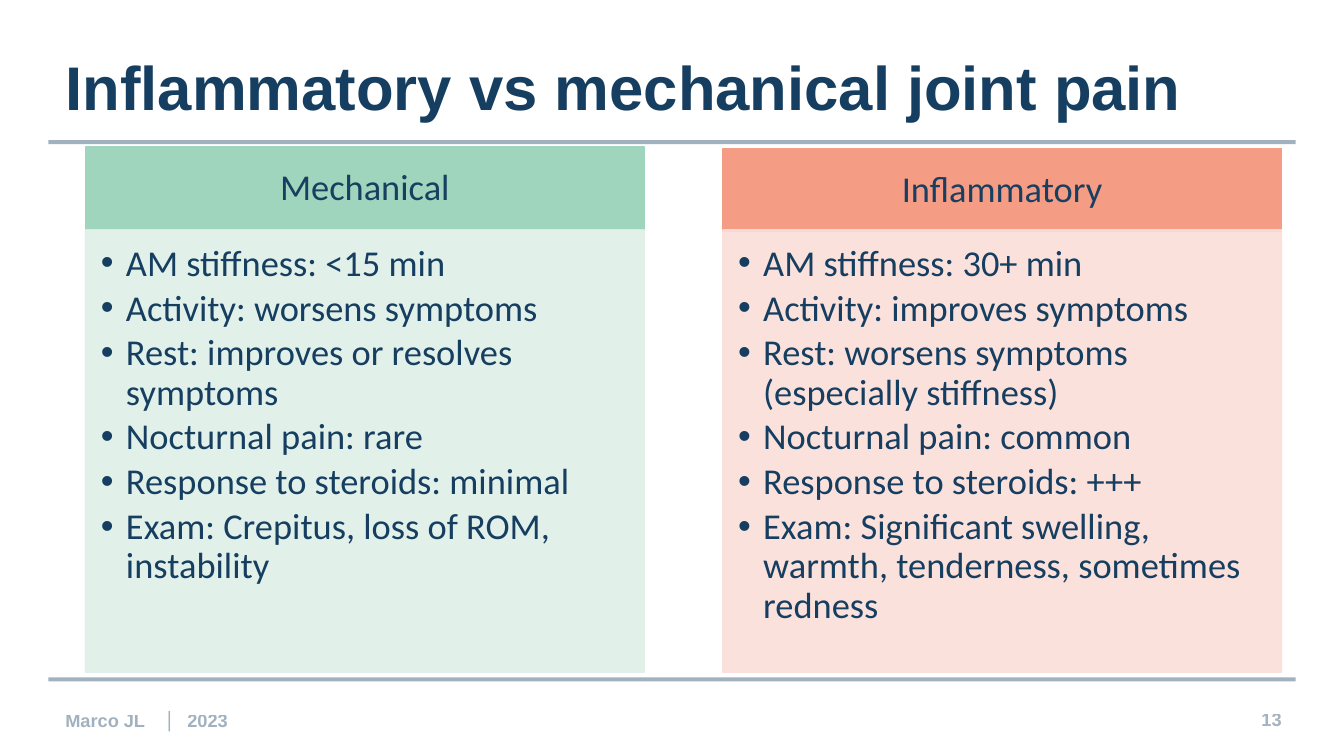
"""Build the slide comparing mechanical and inflammatory joint pain."""
from dataclasses import dataclass
from typing import Any

from lxml.etree import SubElement
from pptx import Presentation
from pptx.dml.color import RGBColor
from pptx.enum.shapes import MSO_CONNECTOR, MSO_SHAPE
from pptx.enum.text import MSO_ANCHOR, MSO_AUTO_SIZE, PP_ALIGN
from pptx.oxml.ns import qn
from pptx.util import Inches, Pt


@dataclass(frozen=True)
class Theme:
    """Colours, fonts, type sizes and opacities."""
    navy: str = "163E60"
    heading_navy: str = "183F5F"
    heading_font: str = "Arial"
    body_font: str = "Calibri"
    divider_font: str = "Montserrat"
    title_size: float = 44
    body_size: float = 26
    footer_size: float = 13
    divider_size: float = 16
    muted: int = 40
    tint: int = 90


@dataclass(frozen=True)
class PainType:
    """One column of the comparison."""
    name: str
    left: float
    top: float
    heading_fill: str
    body_fill: str
    features: tuple[str, ...]


THEME = Theme()
COLUMN_WIDTH, HEADING_HEIGHT, BODY_TOP, BODY_HEIGHT = 5.54, 0.82, 2.28, 4.39
PAIN_TYPES = (
    PainType("Mechanical", 0.85, 1.46, "A0D5BD", "DFEFE8", (
        "AM stiffness: <15 min",
        "Activity: worsens symptoms",
        "Rest: improves or resolves symptoms",
        "Nocturnal pain: rare",
        "Response to steroids: minimal",
        "Exam: Crepitus, loss of ROM, instability",
    )),
    PainType("Inflammatory", 7.17, 1.48, "F59C85", "FBDED9", (
        "AM stiffness: 30+ min",
        "Activity: improves symptoms",
        "Rest: worsens symptoms (especially stiffness)",
        "Nocturnal pain: common",
        "Response to steroids: +++",
        "Exam: Significant swelling, warmth, tenderness, sometimes redness",
    )),
)


def apply(target: Any, **formats: Any) -> None:
    """Set each named format on the target."""
    for name, value in formats.items():
        setattr(target, name, value)


def set_opacity(element: Any, percent: int) -> None:
    """Give every colour inside the element an opacity."""
    for colour in element.iter(qn("a:srgbClr")):
        SubElement(colour, qn("a:alpha"), val=str(percent * 1000))


def add_run(paragraph: Any, text: str, font: str, size: float, colour: str,
            bold: bool = False, opacity: int = 100) -> None:
    """Append formatted text to a paragraph."""
    run = paragraph.add_run()
    run.text = text
    apply(run.font, name=font, size=Pt(size), bold=bold)
    run.font.color.rgb = RGBColor.from_string(colour)
    if opacity < 100:
        set_opacity(run._r, opacity)


def add_rule(slide: Any, y: float) -> None:
    """Draw a muted horizontal rule."""
    rule = slide.shapes.add_connector(
        MSO_CONNECTOR.STRAIGHT, Inches(0.48), Inches(y), Inches(12.85), Inches(y))
    rule.line.width = Pt(3)
    rule.line.color.rgb = RGBColor.from_string(THEME.navy)
    properties = rule._element.spPr
    set_opacity(properties, THEME.muted)
    SubElement(properties, qn("a:effectLst"))


def add_panel(slide: Any, left: float, top: float, height: float, colour: str,
              insets: tuple[float, ...], anchor: Any, opacity: int = 100) -> Any:
    """Draw a filled rectangle and return its text frame."""
    panel = slide.shapes.add_shape(
        MSO_SHAPE.RECTANGLE, Inches(left), Inches(top), Inches(COLUMN_WIDTH), Inches(height))
    panel.shadow.inherit = False
    panel.fill.solid()
    panel.fill.fore_color.rgb = RGBColor.from_string(colour)
    panel.line.width = Pt(1)
    panel.line.color.rgb = RGBColor.from_string(colour)
    if opacity < 100:
        set_opacity(panel._element.spPr, opacity)
    sides = ("margin_left", "margin_top", "margin_right", "margin_bottom")
    margins = {side: Inches(inset) for side, inset in zip(sides, insets)}
    apply(panel.text_frame, word_wrap=True, vertical_anchor=anchor, **margins)
    return panel.text_frame


def add_pain_type(slide: Any, pain: PainType) -> None:
    """Draw a column heading and its bulleted features."""
    heading = add_panel(slide, pain.left, pain.top, HEADING_HEIGHT, pain.heading_fill,
                        (0.2, 0.12, 0.2, 0.12), MSO_ANCHOR.MIDDLE).paragraphs[0]
    apply(heading, alignment=PP_ALIGN.CENTER, line_spacing=0.9)
    add_run(heading, pain.name, THEME.body_font, THEME.body_size, THEME.heading_navy)

    body = add_panel(slide, pain.left, BODY_TOP, BODY_HEIGHT, pain.body_fill,
                     (0.15, 0.15, 0.2, 0.23), MSO_ANCHOR.TOP, THEME.tint)
    for index, feature in enumerate(pain.features):
        bullet = body.add_paragraph() if index else body.paragraphs[0]
        properties = bullet._p.get_or_add_pPr()
        properties.set("marL", str(Inches(0.25)))
        properties.set("indent", str(Inches(-0.25)))
        SubElement(properties, qn("a:buFont"), typeface="Arial")
        SubElement(properties, qn("a:buChar"), char="•")
        apply(bullet, alignment=PP_ALIGN.LEFT, line_spacing=0.9, space_after=Pt(3.9))
        add_run(bullet, feature, THEME.body_font, THEME.body_size, THEME.navy)


def add_footer_box(slide: Any, left: float, top: float, width: float, height: float) -> Any:
    """Add a footer text box and return its paragraph."""
    box = slide.shapes.add_textbox(Inches(left), Inches(top), Inches(width), Inches(height))
    box.text_frame.word_wrap = True
    return box.text_frame.paragraphs[0]


def add_footer(slide: Any) -> None:
    """Write the author, year and page number."""
    credit = add_footer_box(slide, 0.55, 6.95, 6.28, 0.48)
    tabs = SubElement(credit._p.get_or_add_pPr(), qn("a:tabLst"))
    for position in (1.0, 1.21):
        SubElement(tabs, qn("a:tab"), pos=str(Inches(position)), algn="l")
    small = (THEME.heading_font, THEME.footer_size)
    add_run(credit, "Marco JL\t", *small, THEME.navy, True, THEME.muted)
    add_run(credit, "|", THEME.divider_font, THEME.divider_size, THEME.navy,
            opacity=THEME.muted)
    add_run(credit, "\t2023", *small, THEME.navy, True, THEME.muted)

    page = add_footer_box(slide, 12.08, 6.98, 0.73, 0.4)
    page.alignment = PP_ALIGN.RIGHT
    add_run(page, "13", *small, THEME.heading_navy, True, THEME.muted)


def add_title(slide: Any) -> None:
    """Place and format the slide title."""
    title = slide.shapes.title
    apply(title, left=Inches(0.55), top=Inches(0.52), width=Inches(12.3), height=Inches(0.82))
    apply(title.text_frame, word_wrap=True, auto_size=MSO_AUTO_SIZE.NONE,
          vertical_anchor=MSO_ANCHOR.TOP)
    heading = title.text_frame.paragraphs[0]
    apply(heading, alignment=PP_ALIGN.LEFT, line_spacing=0.9)
    add_run(heading, "Inflammatory vs mechanical joint pain",
            THEME.heading_font, THEME.title_size, THEME.navy, True)


def main() -> None:
    """Build and save the presentation."""
    presentation = Presentation()
    apply(presentation, slide_width=Inches(13.33), slide_height=Inches(7.5))
    slide = presentation.slides.add_slide(presentation.slide_layouts[5])
    for y in (6.74, 1.41):
        add_rule(slide, y)
    add_footer(slide)
    add_title(slide)
    for pain in PAIN_TYPES:
        add_pain_type(slide, pain)
    presentation.save("out.pptx")


if __name__ == "__main__":
    main()
